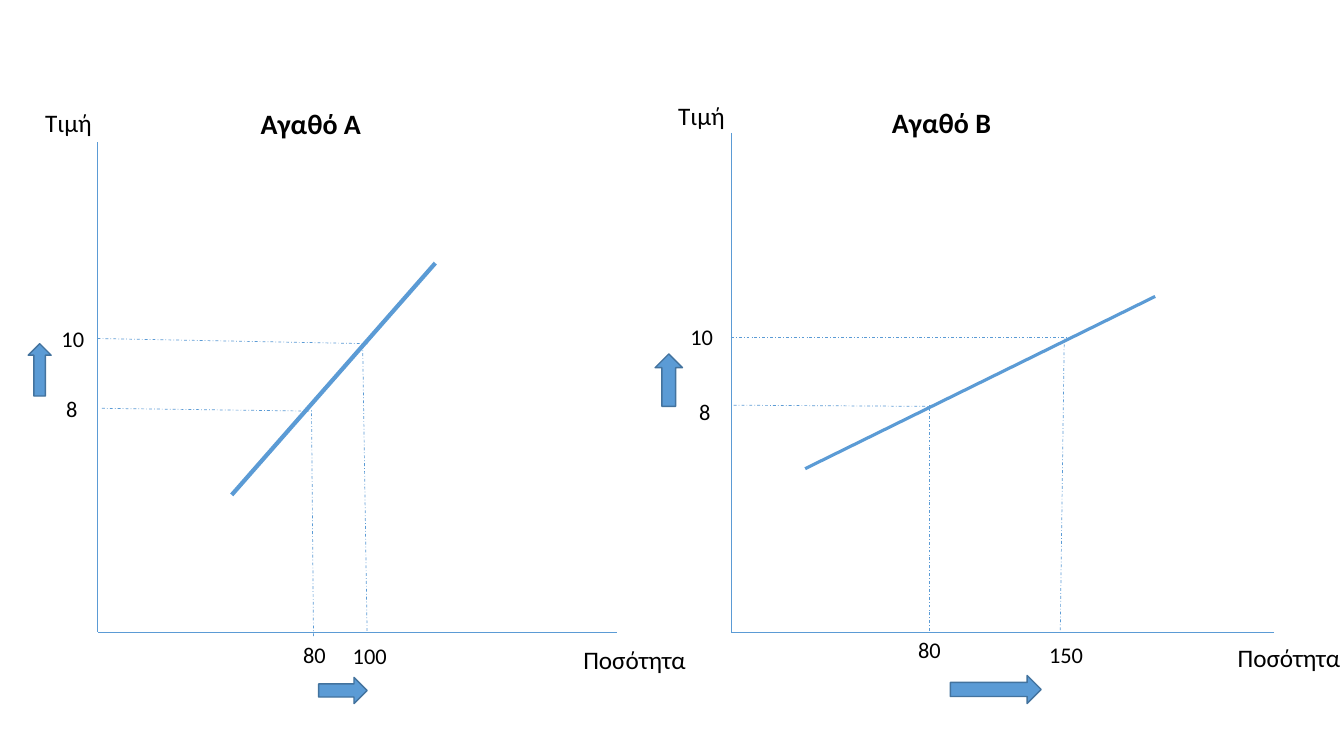
from dataclasses import dataclass

from lxml import etree
from pptx import Presentation
from pptx.dml.color import RGBColor
from pptx.enum.dml import MSO_LINE
from pptx.enum.shapes import MSO_CONNECTOR, MSO_SHAPE
from pptx.enum.text import MSO_AUTO_SIZE
from pptx.oxml.ns import qn
from pptx.slide import Slide
from pptx.util import Cm, Pt

STRAIGHT = MSO_CONNECTOR.STRAIGHT
UP_ARROW = MSO_SHAPE.UP_ARROW
DASH_DOT = MSO_LINE.DASH_DOT
FIT_SHAPE = MSO_AUTO_SIZE.SHAPE_TO_FIT_TEXT

FONT = "Calibri"
BLUE, DARK_BLUE, BLACK = "5B9BD5", "43739E", "000000"
VALUE_SIZE, AXIS_SIZE, TITLE_SIZE = 16, 18, 20
LABEL_HEIGHTS = {VALUE_SIZE: 0.94, AXIS_SIZE: 1.02, TITLE_SIZE: 1.12}
AXIS_BASE = 15.93


@dataclass(frozen=True)
class Segment:
    x1: float
    y1: float
    x2: float
    y2: float


@dataclass(frozen=True)
class Label:
    text: str
    left: float
    top: float
    width: float
    size: int = VALUE_SIZE


@dataclass(frozen=True)
class ChangeArrow:
    left: float
    top: float
    width: float
    height: float
    rotation: int = 0


@dataclass(frozen=True)
class SupplyDiagram:
    """One good's price and quantity diagram; lengths are in centimetres."""
    origin_x: float
    price_top: float
    quantity_end: float
    supply: Segment
    supply_weight: float
    guides: list[Segment]
    labels: list[Label]
    arrows: list[ChangeArrow]


DIAGRAMS = [
    SupplyDiagram(
        origin_x=2.46, price_top=3.58, quantity_end=15.54,
        supply=Segment(5.84, 12.47, 10.97, 6.63), supply_weight=3,
        guides=[
            Segment(2.46, 8.53, 9.27, 8.66),
            Segment(2.57, 10.29, 7.87, 10.36),
            Segment(7.9, 16.03, 7.85, 10.29),
            Segment(9.25, 15.9, 9.14, 8.74),
        ],
        labels=[
            Label("10", 1.3, 8.08, 1.09),
            Label("8", 1.42, 9.83, 0.81),
            Label("80", 7.39, 16.03, 1.09),
            Label("100", 8.64, 16.05, 1.37),
            Label("Τιμή", 0.89, 2.57, 1.7, AXIS_SIZE),
            Label("Ποσότητα", 14.45, 16.1, 3.12, AXIS_SIZE),
            Label("Αγαθό Α", 6.32, 2.57, 3.07, TITLE_SIZE),
        ],
        arrows=[
            ChangeArrow(0.71, 8.66, 0.58, 1.32),
            ChangeArrow(8.31, 16.79, 0.66, 1.22, 90),
        ],
    ),
    SupplyDiagram(
        origin_x=18.42, price_top=3.35, quantity_end=32.11,
        supply=Segment(20.29, 11.81, 29.11, 7.47), supply_weight=2.25,
        guides=[
            Segment(18.42, 8.51, 26.9, 8.51),
            Segment(18.49, 10.21, 23.44, 10.24),
            Segment(23.42, 15.9, 23.42, 10.16),
            Segment(26.72, 15.88, 26.82, 8.53),
        ],
        labels=[
            Label("10", 17.15, 8.03, 1.17),
            Label("8", 17.37, 9.91, 0.81),
            Label("80", 22.89, 15.9, 1.09),
            Label("150", 26.19, 16.03, 1.37),
            Label("Τιμή", 16.84, 2.41, 1.7, AXIS_SIZE),
            Label("Ποσότητα", 30.94, 16.05, 3.12, AXIS_SIZE),
            Label("Αγαθό Β", 22.23, 2.54, 3.02, TITLE_SIZE),
        ],
        arrows=[
            ChangeArrow(16.51, 8.92, 0.69, 1.32),
            ChangeArrow(24.74, 16.23, 0.71, 2.29, 90),
        ],
    ),
]


def color(hex_code: str) -> RGBColor:
    return RGBColor.from_string(hex_code)


def draw_segment(slide: Slide, segment: Segment, weight: float = 0.5,
                 dashed: bool = False) -> None:
    connector = slide.shapes.add_connector(
        STRAIGHT, Cm(segment.x1), Cm(segment.y1), Cm(segment.x2), Cm(segment.y2))
    connector.line.color.rgb = color(BLUE)
    connector.line.width = Pt(weight)
    if dashed:
        connector.line.dash_style = DASH_DOT
    etree.SubElement(connector._element.spPr, qn("a:effectLst"))


def draw_label(slide: Slide, label: Label) -> None:
    box = slide.shapes.add_textbox(Cm(label.left), Cm(label.top), Cm(label.width),
                                   Cm(LABEL_HEIGHTS[label.size]))
    frame = box.text_frame
    frame.text = label.text
    frame.word_wrap = False
    frame.auto_size = FIT_SHAPE
    font = frame.paragraphs[0].runs[0].font
    font.name = FONT
    font.size = Pt(label.size)
    font.bold = label.size == TITLE_SIZE
    font.color.rgb = color(BLACK)


def draw_arrow(slide: Slide, arrow: ChangeArrow) -> None:
    shape = slide.shapes.add_shape(UP_ARROW, Cm(arrow.left), Cm(arrow.top),
                                   Cm(arrow.width), Cm(arrow.height))
    shape.rotation = arrow.rotation
    shape.shadow.inherit = False
    shape.fill.solid()
    shape.fill.fore_color.rgb = color(BLUE)
    shape.line.color.rgb = color(DARK_BLUE)
    shape.line.width = Pt(1)


def draw_diagram(slide: Slide, diagram: SupplyDiagram) -> None:
    x = diagram.origin_x
    draw_segment(slide, Segment(x, diagram.price_top, x, AXIS_BASE))
    draw_segment(slide, Segment(diagram.quantity_end, AXIS_BASE, x, AXIS_BASE))
    draw_segment(slide, diagram.supply, diagram.supply_weight)
    for guide in diagram.guides:
        draw_segment(slide, guide, dashed=True)
    for label in diagram.labels:
        draw_label(slide, label)
    for arrow in diagram.arrows:
        draw_arrow(slide, arrow)


def main() -> None:
    presentation = Presentation()
    presentation.slide_width = Cm(33.87)
    presentation.slide_height = Cm(19.05)
    slide = presentation.slides.add_slide(presentation.slide_layouts[6])
    for diagram in DIAGRAMS:
        draw_diagram(slide, diagram)
    presentation.save("out.pptx")


if __name__ == "__main__":
    main()
